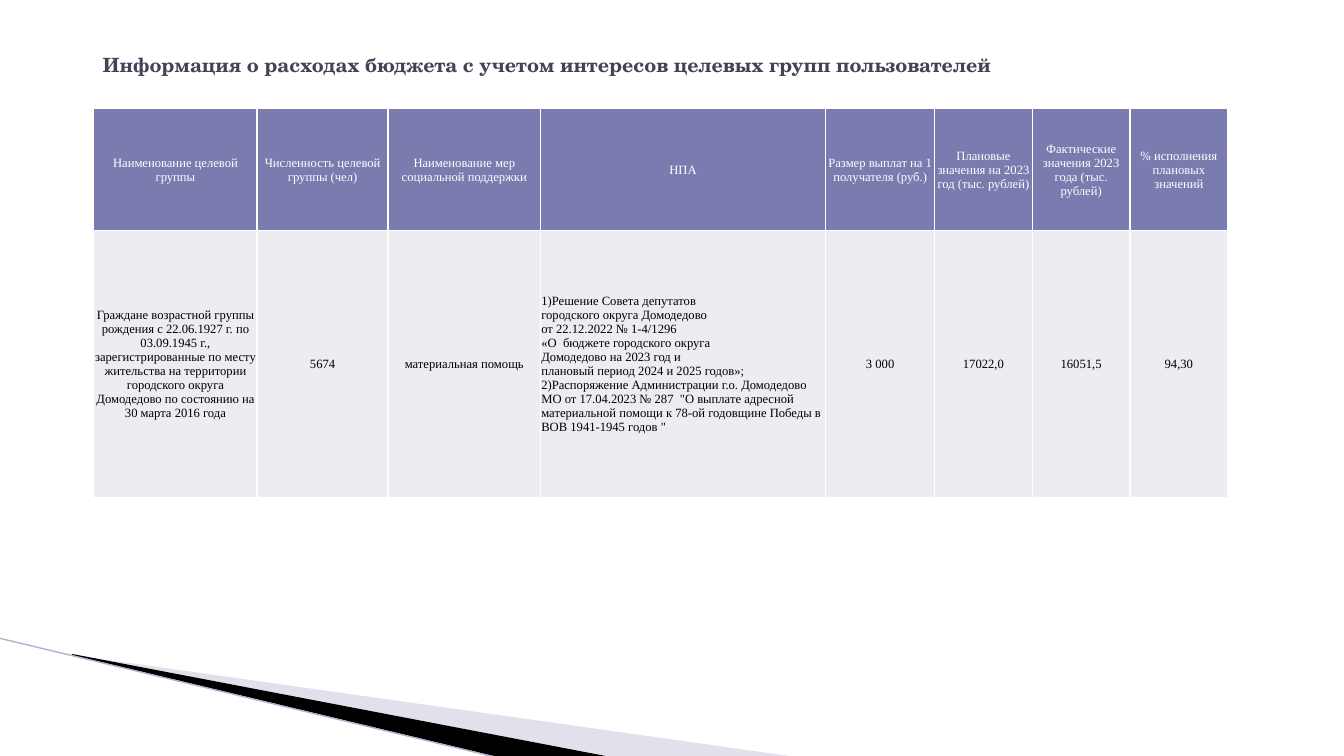
from dataclasses import dataclass

from lxml import etree
from pptx import Presentation
from pptx import util as u
from pptx.dml import color
from pptx.enum import shapes, text
from pptx.oxml import ns

Pt = u.Pt
COLORS = {
    "title": "424456", "header": "7A7BAE", "body": "ECECF2", "white": "FFFFFF",
    "black": "000000", "lilac": "B6B6D1", "edge": "AFB0CC",
}
TITLE_FONT, TABLE_FONT = "TeX Gyre Schola", "Times New Roman"


@dataclass
class Wedge:
    points: list[tuple[float, float]]
    fill: str
    opacity: int = 100


@dataclass
class Column:
    width: float
    header: str
    value: str
    align: text.PP_ALIGN = text.PP_ALIGN.CENTER


WEDGES = [
    Wedge([(52.6, 468.5), (571, 540.7), (437.8, 540.7)], "lilac", 40),
    Wedge([(51.1, 467.3), (438.5, 540.7), (357.1, 541.4), (51.8, 468)], "black"),
]

LEGAL_ACTS = """1)Решение Совета депутатов
городского округа Домодедово
от 22.12.2022 № 1-4/1296
«О  бюджете городского округа
Домодедово на 2023 год и
плановый период 2024 и 2025 годов»;
2)Распоряжение Администрации г.о. Домодедово МО от 17.04.2023 № 287  "О выплате адресной материальной помощи к 78-ой годовщине Победы в ВОВ 1941-1945 годов \""""

COLUMNS = [
    Column(116.6, "Наименование целевой группы",
           "Граждане возрастной группы рождения с 22.06.1927 г. по 03.09.1945 г., "
           "зарегистрированные по месту жительства на территории городского округа "
           "Домодедово по состоянию на 30 марта 2016 года"),
    Column(93.6, "Численность целевой группы (чел)", "5674"),
    Column(108.8, "Наименование мер социальной поддержки", "материальная помощь"),
    Column(203.8, "НПА", LEGAL_ACTS, text.PP_ALIGN.LEFT),
    Column(77.8, "Размер выплат на 1 получателя (руб.)", "3 000"),
    Column(69.8, "Плановые значения на 2023 год (тыс. рублей)", "17022,0"),
    Column(69.8, "Фактические значения 2023 года (тыс. рублей)", "16051,5"),
    Column(69.8, "% исполнения плановых значений", "94,30"),
]
ROW_HEIGHTS = (87.1, 190.8)


def rgb(name: str) -> color.RGBColor:
    return color.RGBColor.from_string(COLORS[name])


def style_run(run, font: str, size: float, ink: str, bold: bool = False) -> None:
    run.font.name, run.font.size, run.font.bold = font, Pt(size), bold
    run.font.color.rgb = rgb(ink)


def draw_wedge(slide, wedge: Wedge) -> None:
    builder = slide.shapes.build_freeform(*wedge.points[0], scale=Pt(1))
    builder.add_line_segments(wedge.points[1:], close=True)
    shape = builder.convert_to_shape()
    shape.shadow.inherit = False
    shape.line.fill.background()
    shape.fill.solid()
    shape.fill.fore_color.rgb = rgb(wedge.fill)
    if wedge.opacity < 100:
        fill_color = shape.element.spPr.find(".//" + ns.qn("a:srgbClr"))
        etree.SubElement(fill_color, ns.qn("a:alpha"), val=str(wedge.opacity * 1000))


def draw_edge(slide) -> None:
    """Draw the thin line along the lower side of the black wedge."""
    edge = slide.shapes.add_connector(
        shapes.MSO_CONNECTOR.STRAIGHT, Pt(-0.7), Pt(455.8), Pt(356.4), Pt(541.4))
    edge.line.color.rgb = rgb("edge")
    edge.line.width = Pt(0.95)
    etree.SubElement(edge.element.spPr, ns.qn("a:effectLst"))


def draw_title(slide) -> None:
    box = slide.shapes.add_textbox(Pt(66.2), Pt(21.6), Pt(738), Pt(49.7))
    frame = box.text_frame
    frame.word_wrap = True
    frame.vertical_anchor = text.MSO_ANCHOR.MIDDLE
    frame.text = "Информация о расходах бюджета с учетом интересов целевых групп пользователей"
    style_run(frame.paragraphs[0].runs[0], TITLE_FONT, 14, "title", bold=True)


def add_borders(cell) -> None:
    properties = cell._tc.get_or_add_tcPr()
    for side in ("lnL", "lnR", "lnT", "lnB"):
        border = etree.SubElement(properties, ns.qn(f"a:{side}"), w=str(Pt(1)))
        fill = etree.SubElement(border, ns.qn("a:solidFill"))
        etree.SubElement(fill, ns.qn("a:srgbClr"), val=COLORS["white"])


def fill_cell(cell, content: str, fill: str, ink: str, align: text.PP_ALIGN) -> None:
    add_borders(cell)
    cell.fill.solid()
    cell.fill.fore_color.rgb = rgb(fill)
    cell.margin_left = cell.margin_right = cell.margin_top = Pt(0.7)
    cell.margin_bottom = Pt(0)
    cell.vertical_anchor = text.MSO_ANCHOR.MIDDLE
    cell.text_frame.text = content
    for paragraph in cell.text_frame.paragraphs:
        paragraph.alignment = align
        for run in paragraph.runs:
            style_run(run, TABLE_FONT, 9, ink)


def draw_table(slide) -> None:
    width = sum(column.width for column in COLUMNS)
    table = slide.shapes.add_table(
        len(ROW_HEIGHTS), len(COLUMNS), Pt(67), Pt(77.4),
        Pt(width), Pt(sum(ROW_HEIGHTS))).table
    for row, height in zip(table.rows, ROW_HEIGHTS):
        row.height = Pt(height)
    for index, column in enumerate(COLUMNS):
        table.columns[index].width = Pt(column.width)
        fill_cell(table.cell(0, index), column.header, "header", "white",
                  text.PP_ALIGN.CENTER)
        fill_cell(table.cell(1, index), column.value, "body", "black", column.align)


def main() -> None:
    deck = Presentation()
    deck.slide_width, deck.slide_height = Pt(960), Pt(540)
    slide = deck.slides.add_slide(deck.slide_layouts[6])
    for wedge in WEDGES:
        draw_wedge(slide, wedge)
    draw_edge(slide)
    draw_title(slide)
    draw_table(slide)
    deck.save("out.pptx")


if __name__ == "__main__":
    main()
